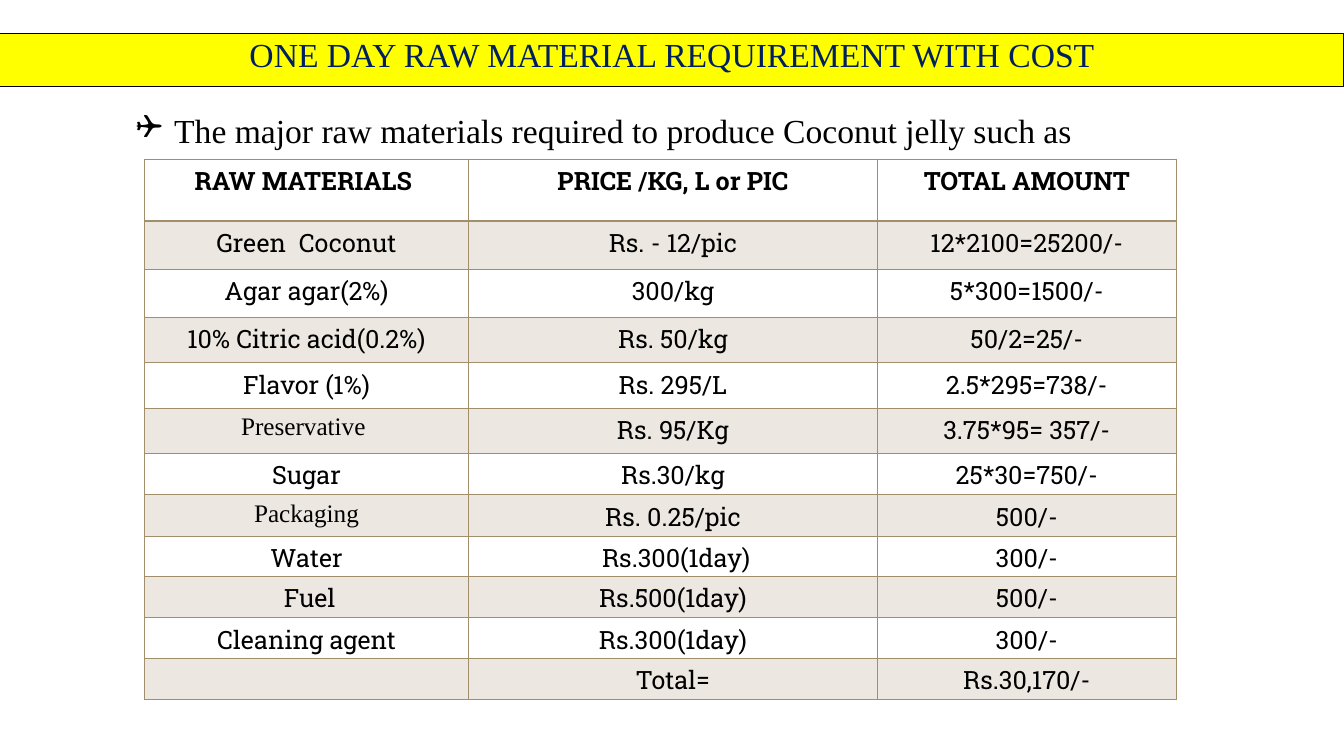
from lxml.etree import SubElement
from pptx import Presentation
from pptx.dml.color import RGBColor
from pptx.enum.shapes import MSO_SHAPE
from pptx.enum.text import MSO_ANCHOR, PP_ALIGN
from pptx.oxml.ns import qn
from pptx.util import Inches, Pt

# Content
TITLE = "ONE DAY RAW MATERIAL REQUIREMENT WITH COST"
INTRO = "The major raw materials required to produce Coconut jelly such as"
ROWS = [
    ("RAW MATERIALS ", "PRICE /KG, L or PIC", "TOTAL AMOUNT"),
    ("Green  Coconut", "Rs. - 12/pic", "12*2100=25200/-"),
    ("Agar agar(2%)", "300/kg", "5*300=1500/-"),
    ("10% Citric acid(0.2%)", "Rs. 50/kg", "50/2=25/-"),
    ("Flavor (1%)", "Rs. 295/L", "2.5*295=738/-"),
    ("Preservative ", "Rs. 95/Kg", "3.75*95= 357/-"),
    ("Sugar", "Rs.30/kg", "25*30=750/-"),
    ("Packaging", "Rs. 0.25/pic", "500/-"),
    ("Water", " Rs.300(1day)", "300/-"),
    (" Fuel", "Rs.500(1day)", "500/-"),
    ("Cleaning agent", "Rs.300(1day)", "300/-"),
    ("", "Total=", "Rs.30,170/-"),
]
COLUMN_WIDTHS = [3.22, 4.05, 2.97]
ROW_HEIGHTS = [0.61, 0.48, 0.48, 0.45, 0.45, 0.45, 0.41, 0.41, 0.4, 0.41, 0.4, 0.41]
SERIF_CELLS = {"Preservative ", "Packaging"}

# Format
SERIF, SLAB = "Times New Roman", "Roboto Slab"
BLACK = RGBColor(0x00, 0x00, 0x00)
NAVY = RGBColor(0x00, 0x20, 0x60)
YELLOW = RGBColor(0xFF, 0xFF, 0x00)
TAN = RGBColor(0xA2, 0x8E, 0x6A)
BAND_OPACITY = 20


def write(para, text, color=BLACK, **values):
    span = para.add_run()
    span.text = text
    span.font.color.rgb = color
    for name, value in values.items():
        setattr(span.font, name, value)


def add_border(cell, side, points):
    line = SubElement(cell._tc.get_or_add_tcPr(), qn(f"a:ln{side}"), w=str(Pt(points)))
    fill = SubElement(line, qn("a:solidFill"))
    SubElement(fill, qn("a:srgbClr"), val=str(TAN))


def fill_band(cell):
    cell.fill.solid()
    cell.fill.fore_color.rgb = TAN
    color = cell._tc.tcPr.find(qn("a:solidFill")).find(qn("a:srgbClr"))
    SubElement(color, qn("a:alpha"), val=str(BAND_OPACITY * 1000))


deck = Presentation()
deck.slide_width, deck.slide_height = Inches(13.33), Inches(7.5)
page = deck.slides.add_slide(deck.slide_layouts[6])

# Title band
band = page.shapes.add_shape(MSO_SHAPE.RECTANGLE, 0, Inches(0.33), deck.slide_width, Inches(0.53))
band.shadow.inherit = False
band.fill.solid()
band.fill.fore_color.rgb = YELLOW
band.line.color.rgb = BLACK
band.line.width = Pt(0.75)
band.text_frame.word_wrap = True
band.text_frame.vertical_anchor = MSO_ANCHOR.TOP
para = band.text_frame.paragraphs[0]
para.alignment = PP_ALIGN.CENTER
para.line_spacing = 0.9
write(para, TITLE, NAVY, size=Pt(24), name=SERIF)

# Bulleted introduction
box = page.shapes.add_textbox(Inches(1.25), Inches(1.04), Inches(10.83), Inches(0.5))
box.text_frame.word_wrap = True
para = box.text_frame.paragraphs[0]
format_element = para._p.get_or_add_pPr()
format_element.set("marL", str(Inches(0.38)))
format_element.set("indent", str(-Inches(0.38)))
SubElement(format_element, qn("a:buFont"), typeface="Wingdings")
SubElement(format_element, qn("a:buChar"), char="❑")
write(para, INTRO, size=Pt(24), name=SERIF)

# Cost table
frame = page.shapes.add_table(
    len(ROWS), len(COLUMN_WIDTHS), Inches(1.43), Inches(1.58),
    Inches(sum(COLUMN_WIDTHS)), Inches(sum(ROW_HEIGHTS)))
table = frame.table
for column, width in zip(table.columns, COLUMN_WIDTHS):
    column.width = Inches(width)
for row, height in zip(table.rows, ROW_HEIGHTS):
    row.height = Inches(height)

for r, texts in enumerate(ROWS):
    for c, text in enumerate(texts):
        cell = table.cell(r, c)
        cell.margin_top, cell.margin_bottom = Inches(0.05), 0
        for side in "LRTB":
            heavy = (r, side) in ((0, "B"), (1, "T"))
            add_border(cell, side, 2 if heavy else 1)
        if r % 2:
            fill_band(cell)
        else:
            cell.fill.background()
        para = cell.text_frame.paragraphs[0]
        para.alignment = PP_ALIGN.CENTER
        if text:
            face = SERIF if text in SERIF_CELLS else SLAB
            write(para, text, size=Pt(18), name=face, bold=r == 0)

deck.save("out.pptx")
